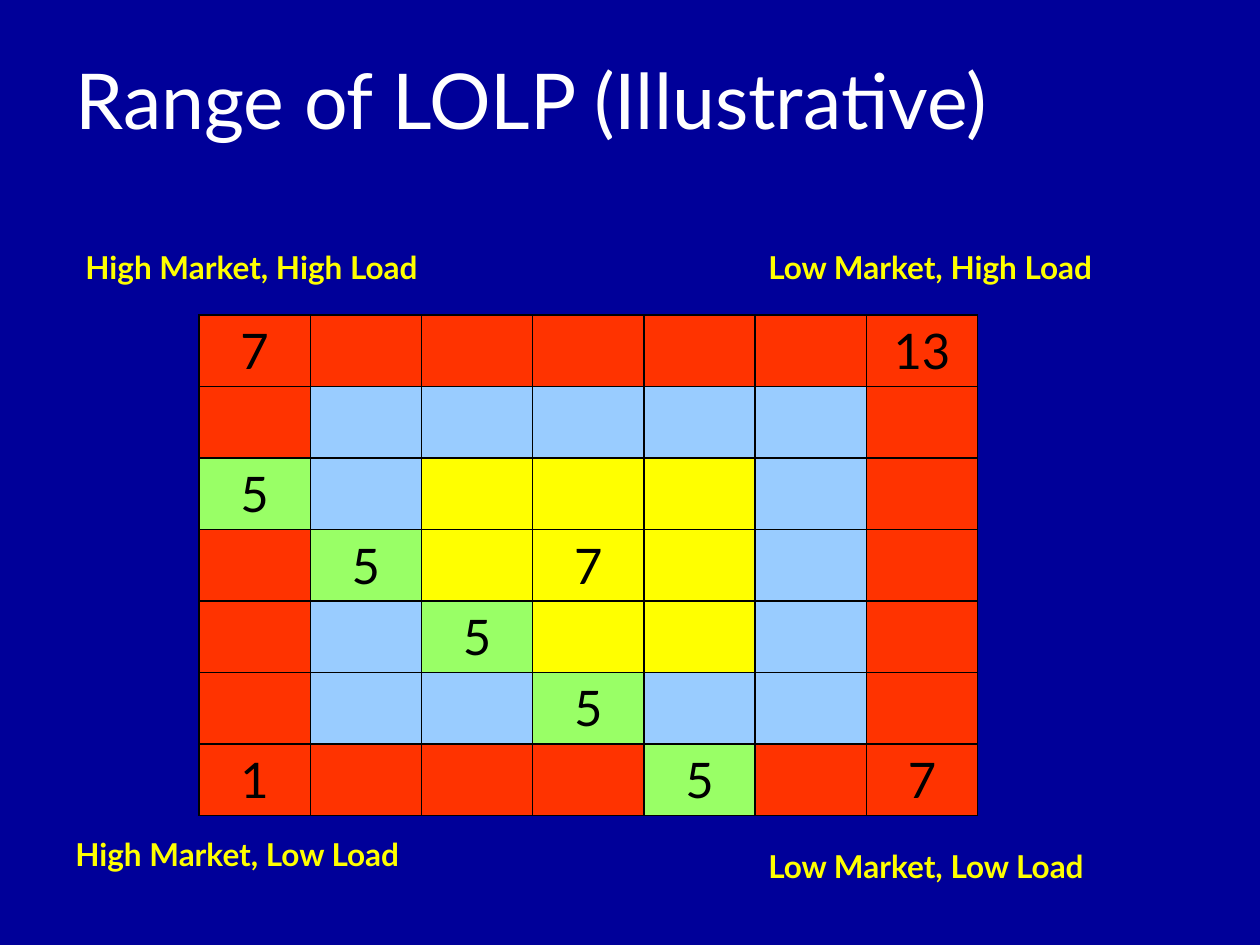
from lxml.etree import SubElement
from pptx import Presentation
from pptx.dml.color import RGBColor
from pptx.enum.text import MSO_ANCHOR as Anchor, PP_ALIGN as Align
from pptx.oxml.ns import qn
from pptx.util import Inches, Pt


def color(hex_code):
    return RGBColor.from_string(hex_code)


def write(frame, text, size, hue, bold=False, align=Align.LEFT, anchor=Anchor.TOP):
    frame.word_wrap = True
    frame.vertical_anchor = anchor
    para = frame.paragraphs[0]
    para.alignment = align
    span = para.add_run()
    span.text = text
    span.font.name = "Lato"
    span.font.size = Pt(size)
    span.font.bold = bold
    span.font.color.rgb = color(hue)


# Slide and background
deck = Presentation()
deck.slide_width, deck.slide_height = Inches(10), Inches(7.5)
page = deck.slides.add_slide(deck.slide_layouts[6])
page.background.fill.solid()
page.background.fill.fore_color.rgb = color("000099")

# Title
title = page.shapes.add_textbox(Inches(0.5), Inches(0.32), Inches(9), Inches(0.93))
write(title.text_frame, "Range of LOLP (Illustrative)", 44, "FFFFFF", anchor=Anchor.MIDDLE)

# Grid of load (rows) against market (columns)
SIZE = 7
RING_FILLS = ["FF3300", "99CCFF", "FFFF00", "FFFF00"]  # outer edge to centre
DIAGONAL_FILL = "99FF66"
values = {(0, 0): "7", (0, 6): "13", (3, 3): "7", (6, 0): "1", (6, 6): "7"}

table = page.shapes.add_table(
    SIZE, SIZE, Inches(1.58), Inches(2.5), Inches(6.18), Inches(3.97)
).table
table.first_row = table.horz_banding = False

for row in range(SIZE):
    for column in range(SIZE):
        cell = table.cell(row, column)
        on_diagonal = row - column == 2
        ring = min(row, column, SIZE - 1 - row, SIZE - 1 - column)

        # Black borders come before the fill
        properties = cell._tc.get_or_add_tcPr()
        for side in ("a:lnL", "a:lnR", "a:lnT", "a:lnB"):
            border = SubElement(properties, qn(side), w=str(Pt(1)))
            border_fill = SubElement(border, qn("a:solidFill"))
            SubElement(border_fill, qn("a:srgbClr"), val="000000")

        cell.fill.solid()
        cell.fill.fore_color.rgb = color(DIAGONAL_FILL if on_diagonal else RING_FILLS[ring])

        value = "5" if on_diagonal else values.get((row, column))
        if value:
            write(cell.text_frame, value, 28, "000000", align=Align.CENTER)

# Corner labels
labels = [
    ("High Market, High Load", 0.58, 1.92),
    ("Low Market, High Load", 6, 1.92),
    ("High Market, Low Load", 0.5, 6.58),
    ("Low Market, Low Load", 6, 6.67),
]
for text, left, top in labels:
    box = page.shapes.add_textbox(Inches(left), Inches(top), Inches(3.33), Inches(0.4))
    write(box.text_frame, text, 18, "FFFF00", bold=True)

deck.save("out.pptx")
